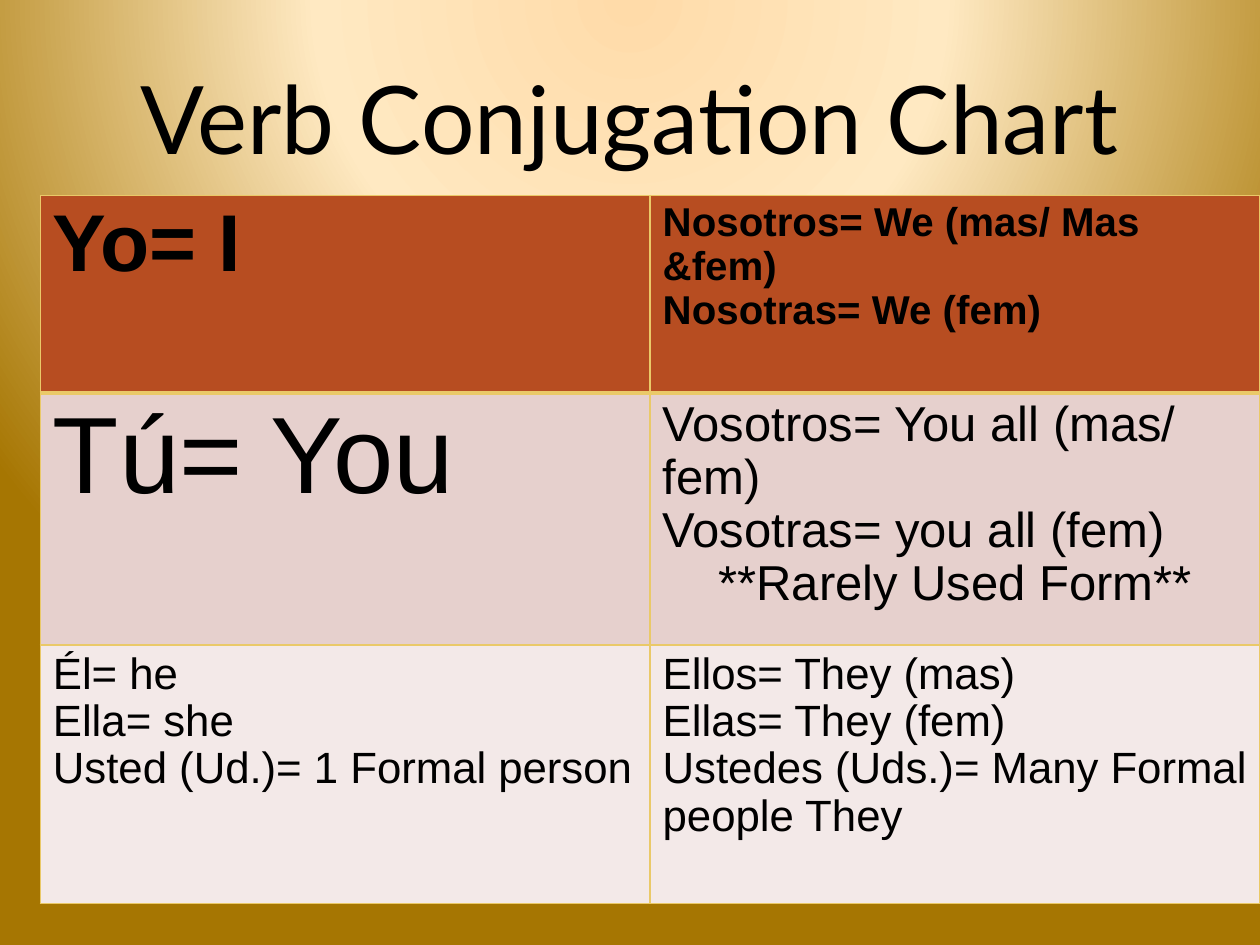
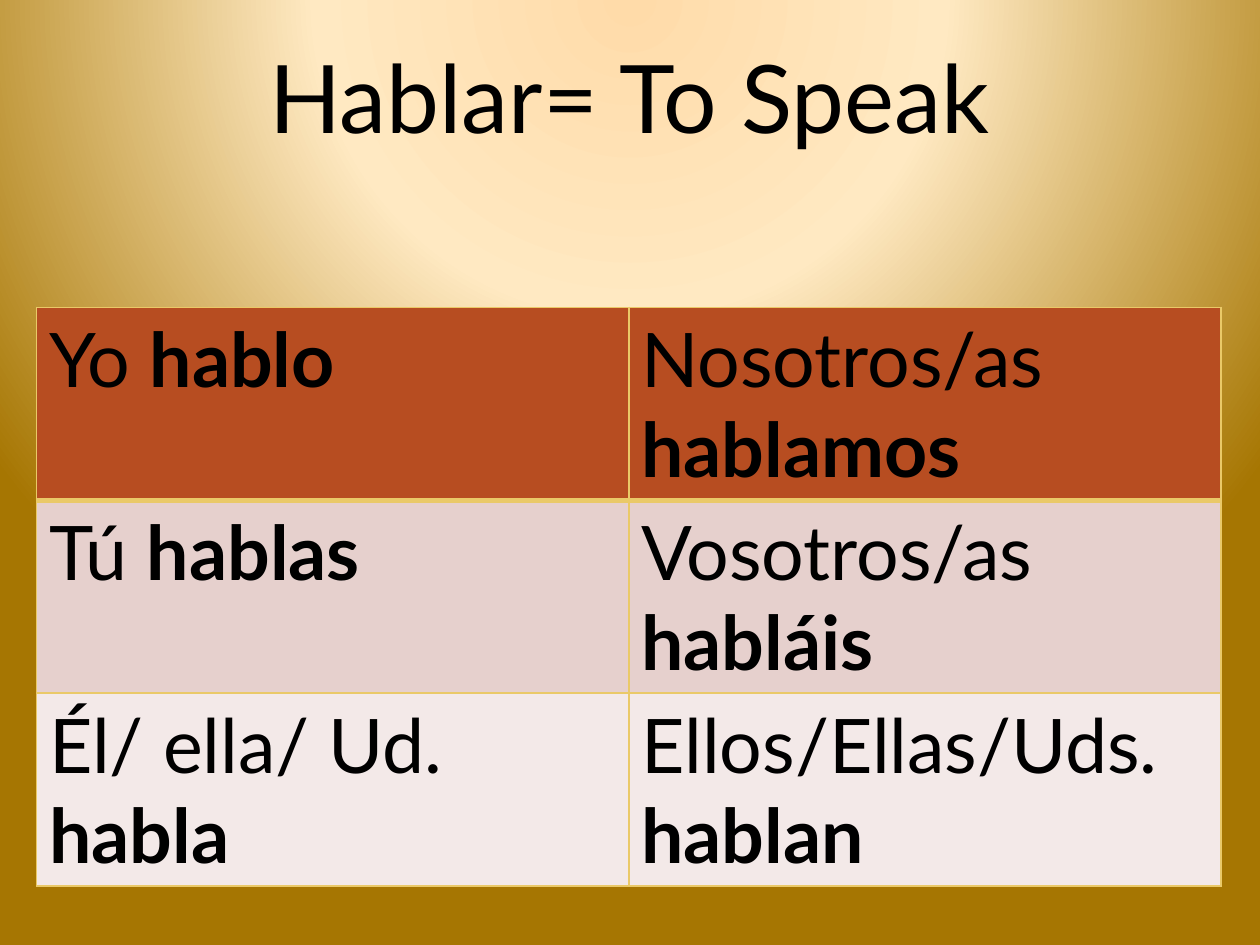
from dataclasses import dataclass

from pptx import Presentation
from pptx.dml.color import RGBColor
from pptx.enum.text import MSO_ANCHOR, MSO_AUTO_SIZE, PP_ALIGN
from pptx.oxml import parse_xml
from pptx.oxml.ns import nsdecls, qn
from pptx.util import Inches, Pt

BLACK = RGBColor(0x00, 0x00, 0x00)
GOLD = RGBColor(0xEA, 0xC9, 0x68)
ROW_FILLS = [
    RGBColor(0xB7, 0x4D, 0x21),
    RGBColor(0xE6, 0xD0, 0xCD),
    RGBColor(0xF3, 0xE9, 0xE8),
]
GLOW_STOPS = [
    (0, RGBColor(0xFF, 0xDB, 0xA9)),
    (40, RGBColor(0xFF, 0xE9, 0xC2)),
    (100, RGBColor(0xA6, 0x76, 0x02)),
]
TITLE_FONT = "Lato"
TITLE_SIZE = 54


@dataclass
class Line:
    """One paragraph: (text, bold) runs."""
    runs: list[tuple[str, bool]]
    align: PP_ALIGN = PP_ALIGN.LEFT


@dataclass
class Entry:
    """One table cell."""
    size: int
    lines: list[Line]


@dataclass
class VerbSlide:
    title: str
    title_height: float
    left: float
    top: float
    col_width: float
    row_heights: list[float]
    font: str
    line_spacing: float
    rows: list[list[Entry]]


def plain(size: int, *texts: str, bold: bool = False) -> Entry:
    return Entry(size, [Line([(text, bold)]) for text in texts])


def verb(pronoun: str, form: str) -> Entry:
    return Entry(43, [Line([(pronoun + " ", False), (form, True)])])


vosotros = plain(28, "Vosotros= You all (mas/ fem)", "Vosotras= you all (fem)")
vosotros.lines.append(Line([("**Rarely Used Form**", False)], PP_ALIGN.CENTER))

SLIDES = [
    VerbSlide(
        "Verb Conjugation Chart", 1.25, 0.32, 1.55, 4.84, [1.57, 2, 2.05],
        "Arial", 0.97,
        [
            [plain(46, "Yo= I", bold=True),
             plain(23, "Nosotros= We (mas/ Mas &fem)", "Nosotras= We (fem)",
                   bold=True)],
            [plain(62, "Tú= You"), vosotros],
            [plain(25, "Él= he", "Ella= she", "Usted (Ud.)= 1 Formal person"),
             plain(25, "Ellos= They (mas)", "Ellas= They (fem)",
                   "Ustedes (Uds.)= Many Formal people They")],
        ],
    ),
    VerbSlide(
        "Hablar= To Speak", 0.92, 0.29, 2.44, 4.7, [1.53] * 3,
        "Lato", 1.0,
        [
            [verb("Yo", "hablo"), verb("Nosotros/as", "hablamos")],
            [verb("Tú", "hablas"), verb("Vosotros/as", "habláis")],
            [verb("Él/ ella/ Ud.", "habla"),
             verb("Ellos/Ellas/Uds.", "hablan")],
        ],
    ),
]


def set_background(prs: Presentation) -> None:
    """Give the master a round glow centred above the slide."""
    stops = "".join(
        f'<a:gs pos="{pos * 1000}"><a:srgbClr val="{color}"/></a:gs>'
        for pos, color in GLOW_STOPS
    )
    c_sld = prs.slide_master.element.find(qn("p:cSld"))
    for bg in c_sld.findall(qn("p:bg")):
        c_sld.remove(bg)
    c_sld.insert(0, parse_xml(
        f'<p:bg {nsdecls("p", "a")}><p:bgPr><a:gradFill rotWithShape="1">'
        f'<a:gsLst>{stops}</a:gsLst><a:path path="circle">'
        '<a:fillToRect l="50000" t="-80000" r="50000" b="180000"/></a:path>'
        '</a:gradFill><a:effectLst/></p:bgPr></p:bg>'
    ))


def add_run(p, text: str, font: str, size: int, bold: bool = False) -> None:
    r = p.add_run()
    r.text = text
    r.font.name = font
    r.font.size = Pt(size)
    r.font.bold = bold
    r.font.color.rgb = BLACK


def set_title(s, spec_title: str, height: float) -> None:
    title = s.shapes.title
    title.left, title.top = Inches(0.62), Inches(0.3)
    title.width, title.height = Inches(8.75), Inches(height)
    tf = title.text_frame
    tf.auto_size = MSO_AUTO_SIZE.NONE
    tf.word_wrap = True
    tf.vertical_anchor = MSO_ANCHOR.MIDDLE
    p = tf.paragraphs[0]
    p.alignment = PP_ALIGN.CENTER
    add_run(p, spec_title, TITLE_FONT, TITLE_SIZE)


def set_borders(cell, row: int) -> None:
    """Thin gold lines, with a thick one under the first row."""
    widths = {"L": 1, "R": 1, "T": 3 if row == 1 else 1,
              "B": 3 if row == 0 else 1}
    tc_pr = cell._tc.get_or_add_tcPr()
    for side, width in widths.items():
        tc_pr.append(parse_xml(
            f'<a:ln{side} {nsdecls("a")} w="{Pt(width)}"><a:solidFill>'
            f'<a:srgbClr val="{GOLD}"/></a:solidFill></a:ln{side}>'
        ))


def fill_cell(cell, entry: Entry, font: str, spacing: float) -> None:
    tf = cell.text_frame
    for i, line in enumerate(entry.lines):
        p = tf.add_paragraph() if i else tf.paragraphs[0]
        p.alignment = line.align
        p.line_spacing = spacing
        for text, bold in line.runs:
            add_run(p, text, font, entry.size, bold)


def add_verb_table(s, verbs: VerbSlide) -> None:
    cols = len(verbs.rows[0])
    table = s.shapes.add_table(
        len(verbs.rows), cols, Inches(verbs.left), Inches(verbs.top),
        Inches(verbs.col_width * cols), Inches(sum(verbs.row_heights)),
    ).table
    table.first_row = table.horz_banding = False
    for col in table.columns:
        col.width = Inches(verbs.col_width)
    for i, entries in enumerate(verbs.rows):
        table.rows[i].height = Inches(verbs.row_heights[i])
        for j, entry in enumerate(entries):
            cell = table.cell(i, j)
            set_borders(cell, i)
            cell.fill.solid()
            cell.fill.fore_color.rgb = ROW_FILLS[i]
            fill_cell(cell, entry, verbs.font, verbs.line_spacing)


def main() -> None:
    prs = Presentation()
    prs.slide_width, prs.slide_height = Inches(10), Inches(7.5)
    set_background(prs)
    title_only = prs.slide_layouts[5]
    for verbs in SLIDES:
        s = prs.slides.add_slide(title_only)
        set_title(s, verbs.title, verbs.title_height)
        add_verb_table(s, verbs)
    prs.save("out.pptx")


if __name__ == "__main__":
    main()
